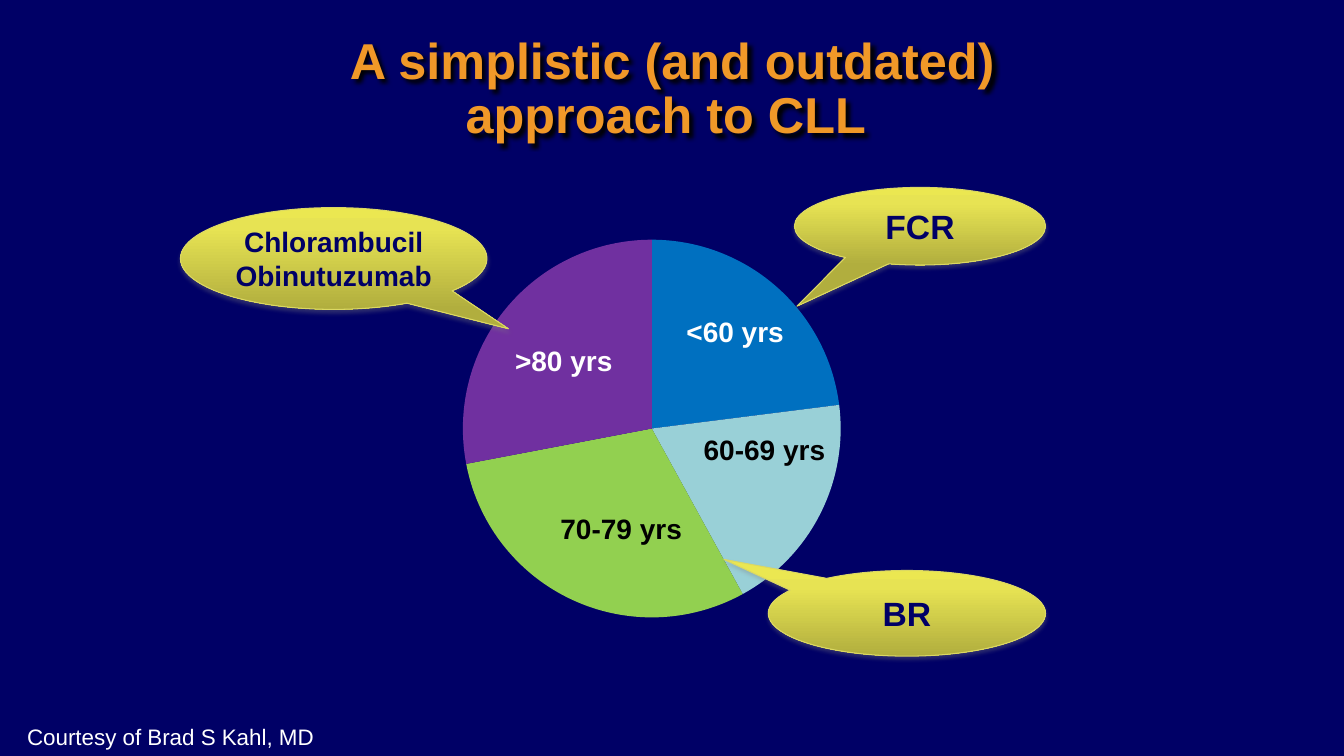
import copy

import lxml.etree
import pptx
import pptx.chart.data
import pptx.dml.color
import pptx.enum.chart
import pptx.enum.shapes
import pptx.enum.text
import pptx.oxml.ns
import pptx.util

RGBColor = pptx.dml.color.RGBColor
Inches = pptx.util.Inches
Pt = pptx.util.Pt
qn = pptx.oxml.ns.qn
PP_ALIGN = pptx.enum.text.PP_ALIGN
MSO_ANCHOR = pptx.enum.text.MSO_ANCHOR
MSO_AUTO_SIZE = pptx.enum.text.MSO_AUTO_SIZE

FONT = "Arial"
NAVY = RGBColor(0x00, 0x00, 0x66)
ORANGE = RGBColor(0xF0, 0x98, 0x28)
WHITE = RGBColor(0xFF, 0xFF, 0xFF)
BLACK = RGBColor(0x00, 0x00, 0x00)
GRAY = RGBColor(0x80, 0x80, 0x80)
CALLOUT_LINE = RGBColor(0xDB, 0xD8, 0x63)
CALLOUT_STOPS = [
    (0, RGBColor(0xEB, 0xE7, 0x51)),
    (0.2, RGBColor(0xE7, 0xE3, 0x53)),
    (1, RGBColor(0xB1, 0xAE, 0x3E)),
]
# Category, share and colour of each age group
AGE_GROUPS = [
    ("1", 23, RGBColor(0x00, 0x70, 0xC0)),
    ("2", 19, RGBColor(0x99, 0xD0, 0xD7)),
    ("3", 30, RGBColor(0x92, 0xD0, 0x50)),
    ("4", 28, RGBColor(0x70, 0x30, 0xA0)),
]


def write_text(shape, text, size, color, bold=True, align=PP_ALIGN.LEFT,
               anchor=MSO_ANCHOR.TOP, wrap=True, auto_size=MSO_AUTO_SIZE.NONE,
               line_spacing=None):
    frame = shape.text_frame
    frame.word_wrap = wrap
    frame.auto_size = auto_size
    frame.vertical_anchor = anchor
    paragraph = frame.paragraphs[0]
    paragraph.text = text
    paragraph.alignment = align
    paragraph.line_spacing = line_spacing
    for run in paragraph.runs:
        run.font.name = FONT
        run.font.size = Pt(size)
        run.font.bold = bold
        run.font.color.rgb = color


def add_shadow(shape, color, opacity, blur, distance, angle):
    shape.shadow.inherit = False
    effects = shape._element.spPr.find(qn("a:effectLst"))
    shadow = lxml.etree.SubElement(
        effects, qn("a:outerShdw"), blurRad=str(Pt(blur)), dist=str(Pt(distance)),
        dir=str(angle * 60000), algn="ctr", rotWithShape="0")
    shadow_color = lxml.etree.SubElement(shadow, qn("a:srgbClr"), val=str(color))
    lxml.etree.SubElement(shadow_color, qn("a:alpha"), val=str(opacity * 1000))


def add_title(slide, left, top, width, height):
    title = slide.shapes.title
    title.left, title.top = Inches(left), Inches(top)
    title.width, title.height = Inches(width), Inches(height)
    write_text(title, "A simplistic (and outdated) approach to CLL ", 36, ORANGE,
               align=PP_ALIGN.CENTER, anchor=MSO_ANCHOR.MIDDLE, line_spacing=0.9)
    add_shadow(title, BLACK, 100, 3, 3, 45)


def add_label(slide, text, left, top, width, height, size=20, color=WHITE, bold=True):
    label = slide.shapes.add_textbox(
        Inches(left), Inches(top), Inches(width), Inches(height))
    write_text(label, text, size, color, bold=bold, wrap=False,
               auto_size=MSO_AUTO_SIZE.SHAPE_TO_FIT_TEXT)


def add_age_pie(slide, left, top, width, height):
    data = pptx.chart.data.CategoryChartData()
    data.categories = [name for name, share, color in AGE_GROUPS]
    data.add_series("Series 1", [share for name, share, color in AGE_GROUPS])
    chart = slide.shapes.add_chart(
        pptx.enum.chart.XL_CHART_TYPE.PIE, Inches(left), Inches(top),
        Inches(width), Inches(height), data).chart
    chart.has_title = False
    chart.has_legend = False
    chart.font.name = FONT
    chart.font.size = Pt(10)
    chart.font.color.rgb = WHITE
    plot = chart.plots[0]
    plot.vary_by_categories = True
    for index, (name, share, color) in enumerate(AGE_GROUPS):
        fill = plot.series[0].points[index].format.fill
        fill.solid()
        fill.fore_color.rgb = color

    # Fixed inner plot area
    plot_area = chart._chartSpace.chart.plotArea
    for old_layout in plot_area.findall(qn("c:layout")):
        plot_area.remove(old_layout)
    layout = lxml.etree.Element(qn("c:layout"))
    plot_area.insert(0, layout)
    manual = lxml.etree.SubElement(layout, qn("c:manualLayout"))
    settings = [("layoutTarget", "inner"), ("xMode", "edge"), ("yMode", "edge"),
                ("x", "0.166"), ("y", "0.023"), ("w", "0.668"), ("h", "0.899")]
    for tag, value in settings:
        lxml.etree.SubElement(manual, qn("c:" + tag), val=value)

    # Age labels, placed relative to the chart
    for text, x, y, label_width, color in [
        ("<60 yrs", 3.05, 0.84, 1.18, WHITE),
        (">80 yrs", 1.35, 1.13, 1.18, WHITE),
        ("60-69 yrs", 3.22, 2.01, 1.42, BLACK),
        ("70-79 yrs", 1.8, 2.8, 1.42, BLACK),
    ]:
        add_label(slide, text, left + x, top + y, label_width, 0.44, color=color)


def add_callout(slide, text, left, top, width, height, pointer, size=24):
    callout = slide.shapes.add_shape(
        pptx.enum.shapes.MSO_SHAPE.OVAL_CALLOUT,
        Inches(left), Inches(top), Inches(width), Inches(height))
    callout.adjustments[0], callout.adjustments[1] = pointer
    callout.fill.gradient()
    callout.fill.gradient_angle = 270
    stop_list = callout._element.spPr.find(qn("a:gradFill")).find(qn("a:gsLst"))
    stop_list.append(copy.deepcopy(stop_list[0]))
    for stop, (position, color) in zip(callout.fill.gradient_stops, CALLOUT_STOPS):
        stop.position = position
        stop.color.rgb = color
    callout.line.color.rgb = CALLOUT_LINE
    callout.line.width = Pt(0.75)
    add_shadow(callout, GRAY, 35, 3.1, 1.8, 90)
    write_text(callout, text, size, NAVY, align=PP_ALIGN.CENTER,
               anchor=MSO_ANCHOR.MIDDLE)


def main():
    presentation = pptx.Presentation()
    presentation.slide_width = Inches(13.33)
    presentation.slide_height = Inches(7.5)
    slide = presentation.slides.add_slide(presentation.slide_layouts[5])
    slide.background.fill.solid()
    slide.background.fill.fore_color.rgb = NAVY

    add_title(slide, 2.42, 0.44, 8.5, 0.91)
    add_age_pie(slide, 3.66, 2.23, 5.61, 4.28)

    # Treatment for each age group
    add_callout(slide, "Chlorambucil\vObinutuzumab", 1.79, 2.06, 3.04, 1.01,
                (0.57, 0.69), size=20)
    add_callout(slide, "FCR", 7.88, 1.86, 2.49, 0.77, (-0.49, 1.03))
    add_callout(slide, "BR", 7.62, 5.66, 2.75, 0.85, (-0.66, -0.63))

    # Credit line
    add_label(slide, "Courtesy of Brad S Kahl, MD", 0.17, 7.13, 3.15, 0.37,
              size=16, bold=False)
    presentation.save("out.pptx")


if __name__ == "__main__":
    main()
